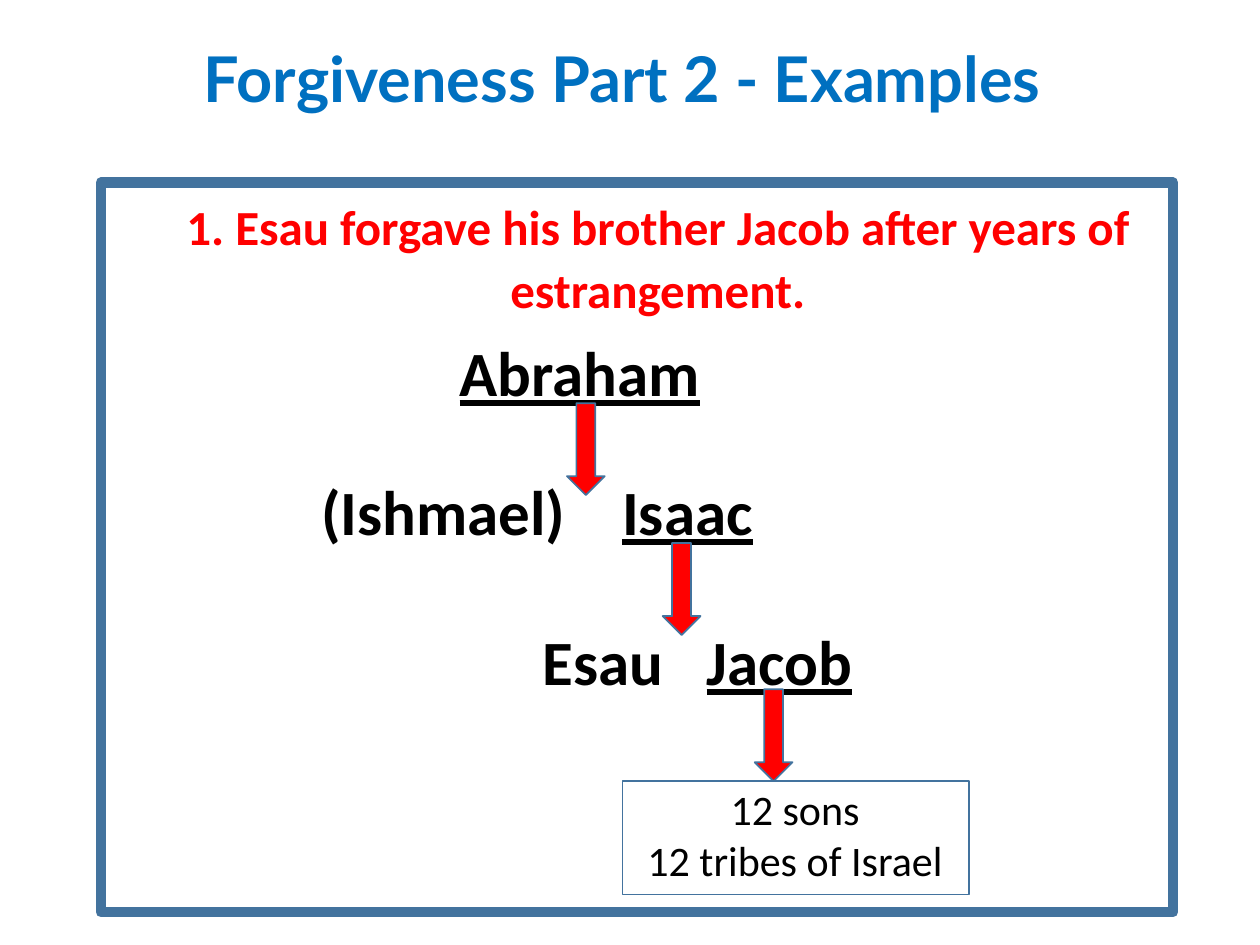
from pptx import Presentation
from pptx.dml.color import RGBColor
from pptx.enum.shapes import MSO_SHAPE as Shape
from pptx.enum.text import MSO_AUTO_SIZE as Fit, PP_ALIGN as Align
from pptx.util import Inches, Pt

WIDE, HIGH = Inches(10), Inches(7.5)
COLS, ROWS = 100, 75

BLUE = RGBColor(0x00, 0x70, 0xC0)
STEEL = RGBColor(0x43, 0x73, 0x9E)
RED = RGBColor(0xFF, 0x00, 0x00)
BLACK = RGBColor(0x00, 0x00, 0x00)

# Names: text, left column, top row, width, underlined
NAMES = [
    ("Abraham", 35.5, 26, 33.1, True),
    ("(Ishmael)", 24.5, 37, 23, False),
    ("Isaac", 48.4, 37, 27.3, True),
    ("Esau", 42.1, 48.9, 12, False),
    ("Jacob", 55.1, 48.9, 43.3, True),
]
# Arrows: left column, top row
ARROWS = [(45, 32), (52.6, 43.1), (59.9, 54.7)]


def place(col, row, cols, rows):
    """Turn grid columns and rows into slide lengths."""
    across, down = WIDE / COLS, HIGH / ROWS
    return (round(col * across), round(row * down),
            round(cols * across), round(rows * down))


def add_text(slide, text, spot, size, color=BLACK, font="Calibri",
             bold=True, line=False, align=Align.LEFT, loose=False):
    """Add a text box; loose sets wider lines and space after."""
    frame = slide.shapes.add_textbox(*place(*spot)).text_frame
    frame.word_wrap = True
    frame.auto_size = Fit.SHAPE_TO_FIT_TEXT
    frame.text = text
    for para in frame.paragraphs:
        para.alignment = align
        if loose:
            para.line_spacing = 1.07
            para.space_after = Pt(8)
        for run in para.runs:
            face = run.font
            face.name, face.size = font, Pt(size)
            face.bold, face.underline = bold, line
            face.color.rgb = color


def add_form(slide, kind, spot, width, fill=None):
    form = slide.shapes.add_shape(kind, *place(*spot))
    form.shadow.inherit = False
    form.line.color.rgb = STEEL
    form.line.width = Pt(width)
    if fill is None:
        form.fill.background()
    else:
        form.fill.solid()
        form.fill.fore_color.rgb = fill


def main():
    deck = Presentation()
    deck.slide_width, deck.slide_height = WIDE, HIGH
    slide = deck.slides.add_slide(deck.slide_layouts[6])

    add_text(slide, "Forgiveness Part 2 - Examples ", (0, 2.2, COLS, 7.4),
             36, BLUE, "Lato", align=Align.CENTER, loose=True)
    add_text(slide,
             "1. Esau forgave his brother Jacob after years of estrangement.",
             (11.5, 14.8, 81.4, 16.9), 28, RED,
             align=Align.CENTER, loose=True)
    add_form(slide, Shape.RECTANGLE, (8, 14.5, 85.1, 57.9), 6)

    for name, col, row, cols, line in NAMES:
        add_text(slide, name, (col, row, cols, 7.1), 36, line=line)
    for col, row in ARROWS:
        add_form(slide, Shape.DOWN_ARROW, (col, row, 3, 7.3), 1, RED)

    add_text(slide, "12 sons\n12 tribes of Israel", (47.9, 61.7, 30.4, 9.1),
             24, bold=False, align=Align.CENTER)
    add_form(slide, Shape.RECTANGLE, (49.4, 62, 27.5, 9), 1)

    deck.save("out.pptx")


if __name__ == "__main__":
    main()
